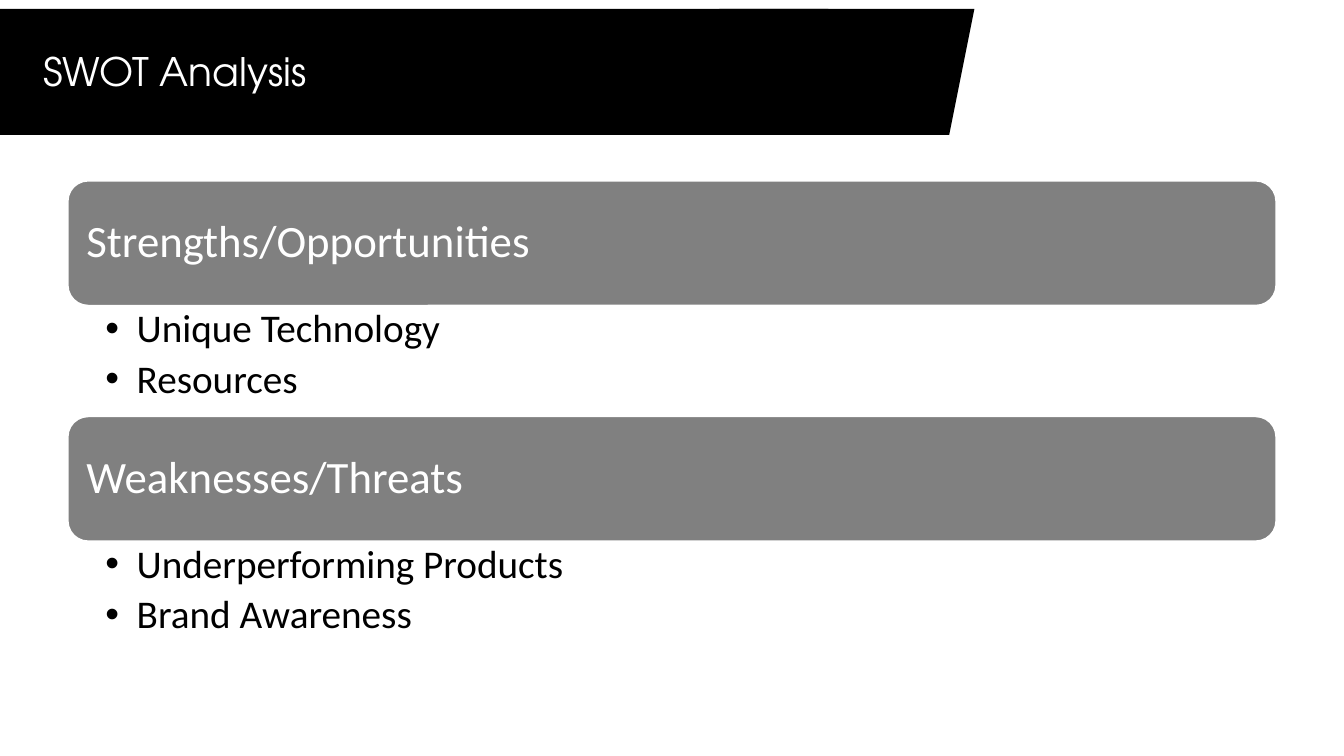
"""Build the SWOT analysis slide."""
import pptx
import pptx.dml.color
import pptx.enum.shapes
import pptx.enum.text
import pptx.util
from lxml import etree

WIDTH, HEIGHT = pptx.util.Inches(13.333), pptx.util.Inches(7.5)
COL, ROW = WIDTH / 20, HEIGHT / 6
COLORS = {"banner": "000000", "heading": "808080", "light": "FFFFFF", "dark": "000000"}
SHAPE = pptx.enum.shapes.MSO_SHAPE
ANCHOR = pptx.enum.text.MSO_ANCHOR
SECTIONS = [
    ("Strengths/Opportunities", ["Unique Technology", "Resources"]),
    ("Weaknesses/Threats", ["Underperforming Products", "Brand Awareness"]),
]


def rgb(name):
    """Return the named colour."""
    return pptx.dml.color.RGBColor.from_string(COLORS[name])


def grid(col, row, cols, rows):
    """Turn grid columns and rows into a position and size."""
    return round(col * COL), round(row * ROW), round(cols * COL), round(rows * ROW)


def add_block(slide, kind, box, fill, outline=None):
    """Add a filled shape, with an outline when a colour is named."""
    sp = slide.shapes.add_shape(kind, *grid(*box))
    sp.shadow.inherit = False
    sp.fill.solid()
    sp.fill.fore_color.rgb = rgb(fill)
    if outline:
        sp.line.color.rgb = rgb(outline)
        sp.line.width = pptx.util.Pt(2)
    else:
        sp.line.fill.background()
    return sp


def set_frame(sp, anchor, left, top, right, bottom):
    """Set wrapping, anchor and insets in inches, and return the text frame."""
    tf = sp.text_frame
    tf.word_wrap = True
    tf.vertical_anchor = anchor
    tf.margin_left, tf.margin_top = pptx.util.Inches(left), pptx.util.Inches(top)
    tf.margin_right, tf.margin_bottom = pptx.util.Inches(right), pptx.util.Inches(bottom)
    return tf


def write(p, text, size, color, font="Calibri"):
    """Write one left-aligned paragraph."""
    p.text = text
    p.alignment = pptx.enum.text.PP_ALIGN.LEFT
    r = p.runs[0]
    r.font.size = pptx.util.Pt(size)
    r.font.name = font
    r.font.color.rgb = rgb(color)


def add_bullet(p):
    """Give a paragraph a hanging bullet."""
    pPr = p._p.get_or_add_pPr()
    indent = pptx.util.Inches(0.31)
    pPr.set("marL", str(indent))
    pPr.set("indent", str(-indent))
    ns = pptx.oxml.ns.qn
    etree.SubElement(pPr, ns("a:buFont")).set("typeface", "Arial")
    etree.SubElement(pPr, ns("a:buChar")).set("char", "•")


def add_banner(slide, title):
    """Add the slanted banner and its title."""
    add_block(slide, SHAPE.RECTANGLE, (0, 0.07, 12.33, 1), "banner")
    slant = add_block(slide, SHAPE.PARALLELOGRAM, (10.33, 0.07, 4.17, 1), "banner")
    slant.adjustments[0] = 0.2
    sp = slide.shapes.add_textbox(*grid(0.5, 0.2, 13.25, 0.73))
    tf = set_frame(sp, ANCHOR.MIDDLE, 0.1, 0.05, 0.1, 0.05)
    write(tf.paragraphs[0], title, 28, "light", "TeX Gyre Adventor")


def add_section(slide, row, heading, points):
    """Add a rounded heading bar with its bullet list below."""
    bar = add_block(slide, SHAPE.ROUNDED_RECTANGLE, (1, row, 18, 1), "heading", "light")
    p = set_frame(bar, ANCHOR.MIDDLE, 0.13, 0.13, 0.13, 0.13).paragraphs[0]
    write(p, heading, 32, "light")
    p.line_spacing = 0.9
    sp = slide.shapes.add_textbox(*grid(1, row + 0.99, 18, 0.88))
    tf = set_frame(sp, ANCHOR.TOP, 0.38, 0.04, 0.22, 0.04)
    for i, point in enumerate(points):
        p = tf.add_paragraph() if i else tf.paragraphs[0]
        add_bullet(p)
        write(p, point, 28, "dark")
        p.level = 1
        p.line_spacing = 0.9
        p.space_after = pptx.util.Pt(5.6)


def main():
    """Build and save the slide."""
    prs = pptx.Presentation()
    prs.slide_width, prs.slide_height = WIDTH, HEIGHT
    slide = prs.slides.add_slide(prs.slide_layouts[6])
    add_banner(slide, "SWOT Analysis")
    for i, (heading, points) in enumerate(SECTIONS):
        add_section(slide, 1.43 + 1.87 * i, heading, points)
    prs.save("out.pptx")


if __name__ == "__main__":
    main()
